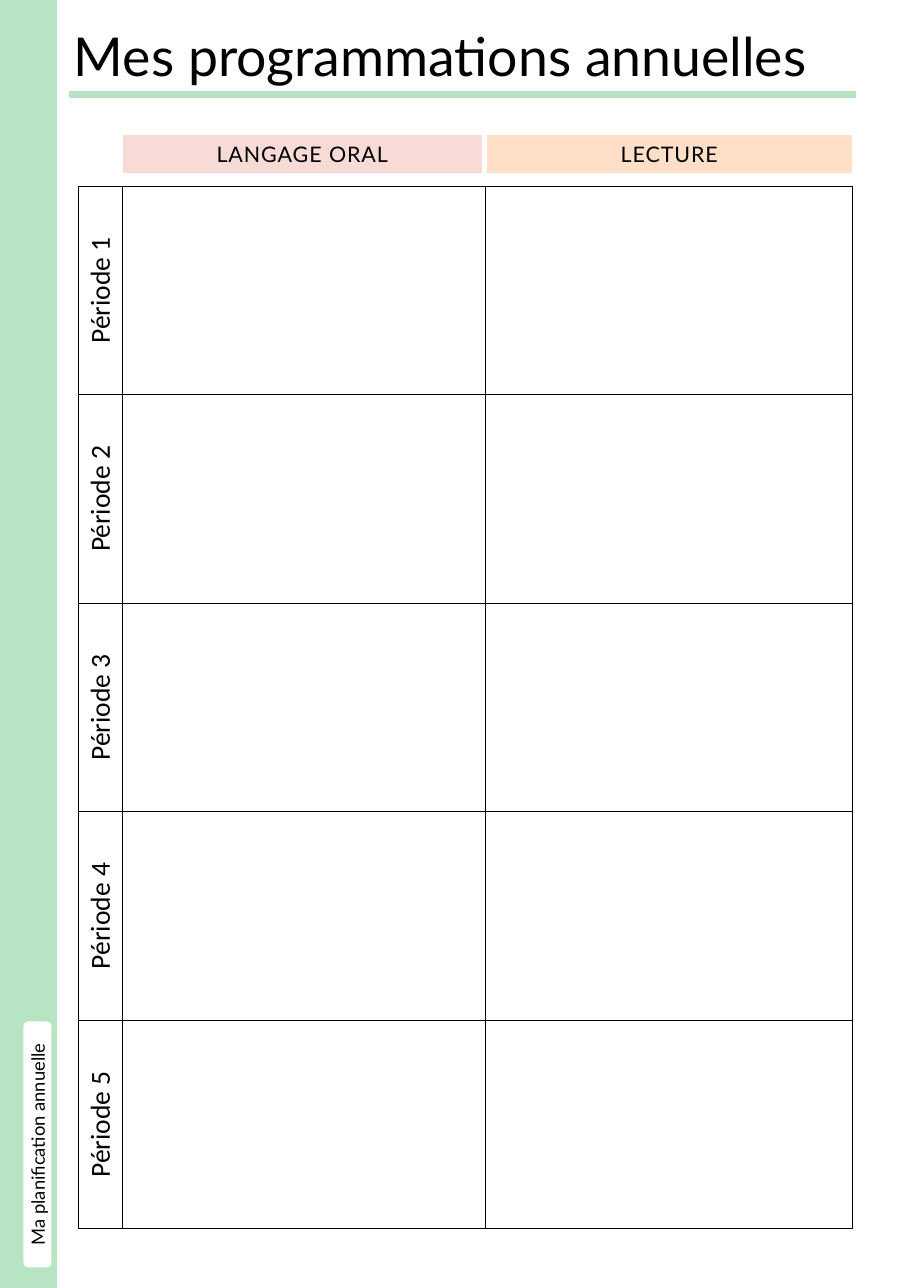
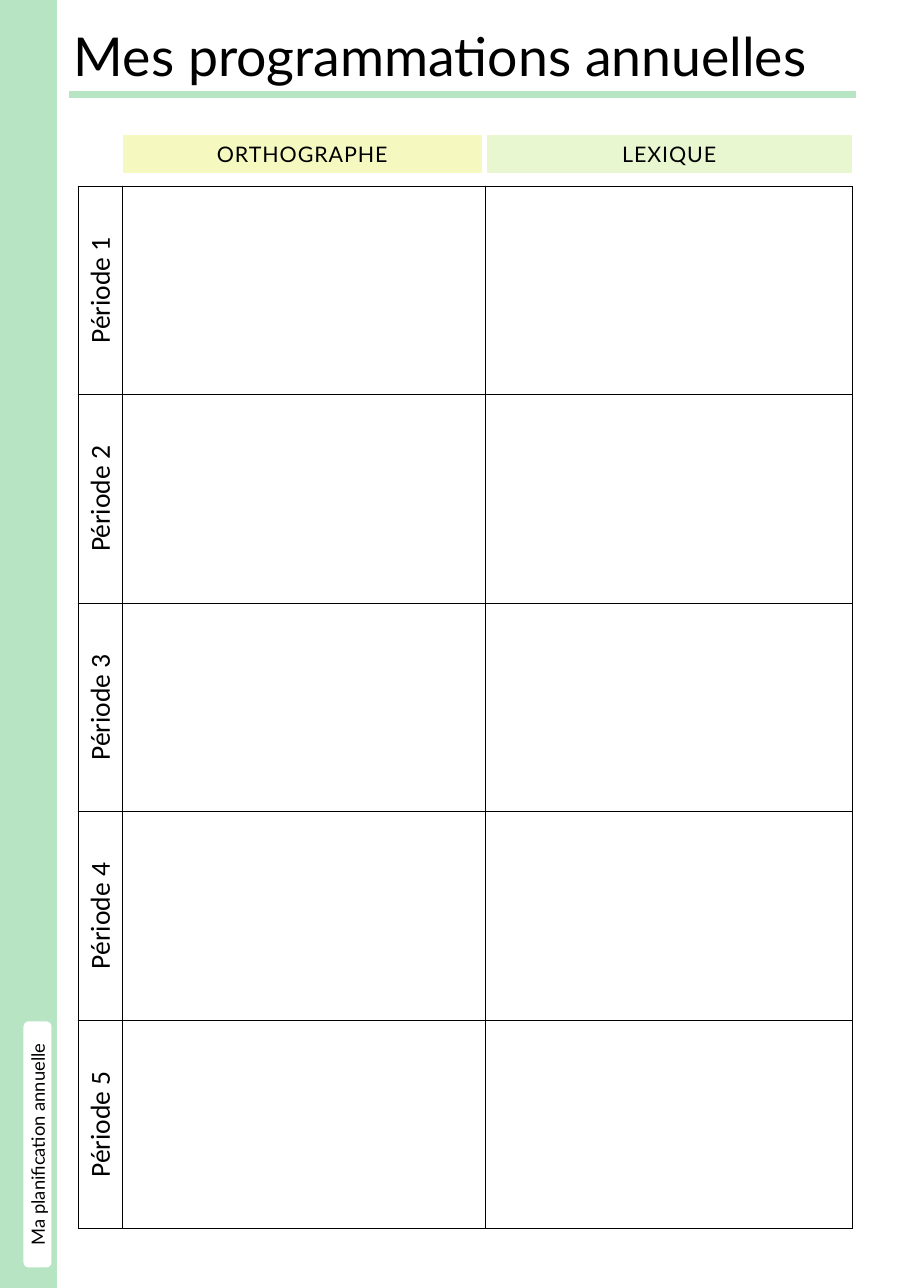
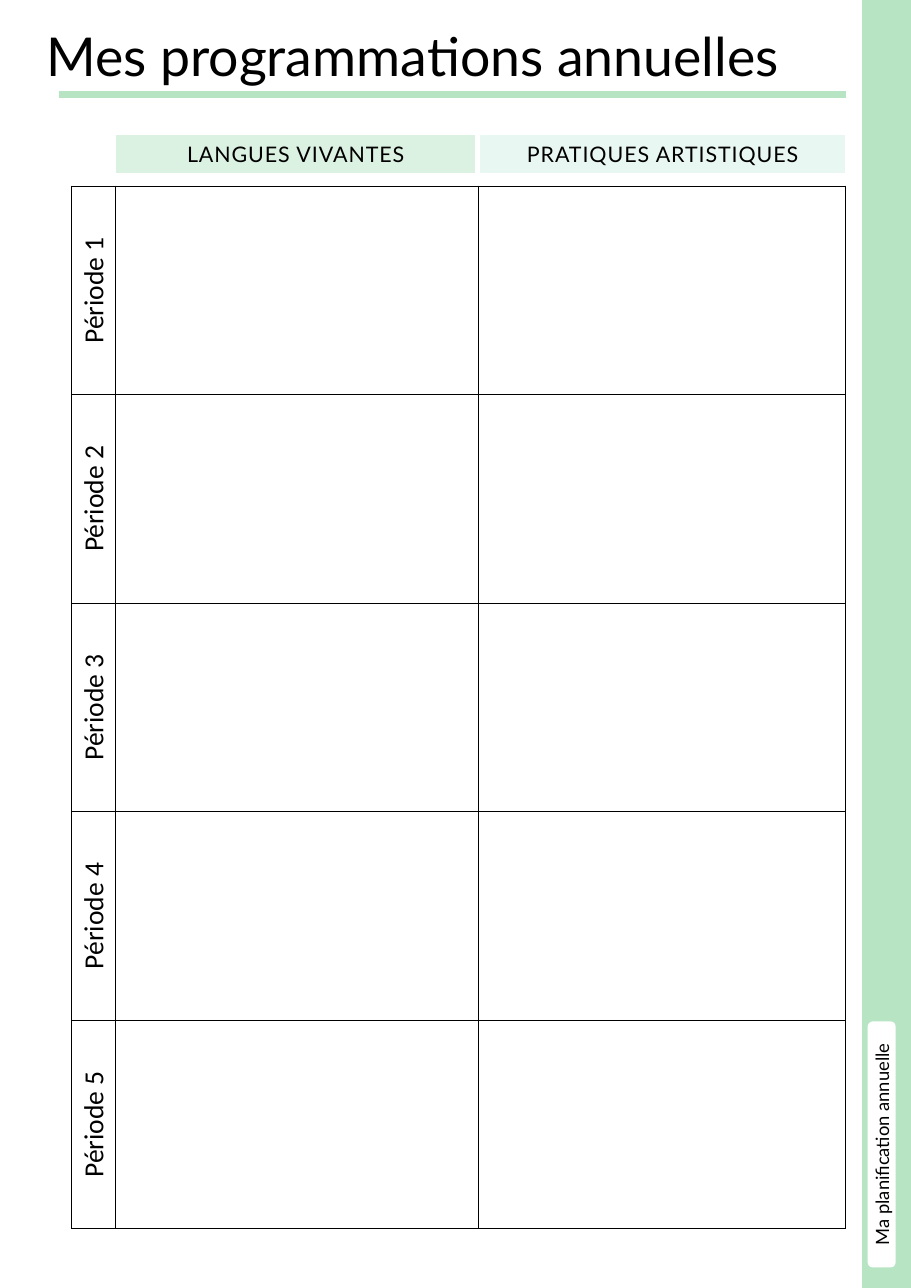
import dataclasses

import lxml.etree
import pptx
import pptx.dml.color
import pptx.enum.shapes
import pptx.enum.text
import pptx.oxml.ns
import pptx.util

Cm = pptx.util.Cm
Pt = pptx.util.Pt
SHAPES = pptx.enum.shapes.MSO_SHAPE
ALIGN = pptx.enum.text.PP_ALIGN
ANCHOR = pptx.enum.text.MSO_ANCHOR
qn = pptx.oxml.ns.qn

PAGE_WIDTH, PAGE_HEIGHT = 21, 29.7
GREEN, WHITE, BLACK = "B7E5C3", "FFFFFF", "000000"
HEADING_FONT, TABLE_FONT = "Lato", "Calibri"
COLUMN_WIDTHS = (1.02, 8.36, 8.46)
ROW_HEIGHT = 4.81
PERIODS = 5
HEADER_HEIGHT = 0.86
HEADER_TO_TABLE = 1.17


@dataclasses.dataclass
class Side:
    """Horizontal positions, in centimetres, for one side of a sheet."""
    band_left: float
    band_width: float
    label_left: float
    title_left: float
    rule_left: float
    grid_left: float


LEFT_BAND = Side(0, 1.3, 0.56, 1.45, 1.6, 1.8)
RIGHT_BAND = Side(19.89, 1.1, 20.02, 0.81, 1.37, 1.65)

PAGES = (
    (LEFT_BAND, (("LANGAGE ORAL", "F8DAD7"), ("LECTURE", "FFDFC8"))),
    (LEFT_BAND, (("ORTHOGRAPHE", "F5F9C0"), ("LEXIQUE", "E9F7D1"))),
    (RIGHT_BAND, (("LANGUES VIVANTES", "DBF1E1"), ("PRATIQUES ARTISTIQUES", "E9F7F3"))),
)


def color(value):
    """Turn a hex string into a colour."""
    return pptx.dml.color.RGBColor.from_string(value)


def write(frame, text, size, font=HEADING_FONT, align=ALIGN.CENTER):
    """Write one formatted paragraph and return it."""
    para = frame.paragraphs[0]
    para.text = text
    para.alignment = align
    para.font.size = Pt(size)
    para.font.name = font
    para.font.color.rgb = color(BLACK)
    return para


def add_box(page, kind, left, top, width, height, fill, line_width):
    """Add a flat shape whose outline matches its fill."""
    box = page.shapes.add_shape(kind, Cm(left), Cm(top), Cm(width), Cm(height))
    box.shadow.inherit = False
    box.fill.solid()
    box.fill.fore_color.rgb = color(fill)
    box.line.color.rgb = color(fill)
    box.line.width = Pt(line_width)
    return box


def add_title(page, left, top):
    """Place the page title."""
    title = page.shapes.title
    title.left, title.top, title.width, title.height = Cm(left), Cm(top), Cm(19.5), Cm(1.75)
    frame = title.text_frame
    frame.auto_size = pptx.enum.text.MSO_AUTO_SIZE.NONE
    frame.vertical_anchor = ANCHOR.TOP
    write(frame, "Mes programmations annuelles", 35, align=ALIGN.LEFT)


def add_side_band(page, side):
    """Draw the coloured edge and its section label."""
    add_box(page, SHAPES.RECTANGLE, side.band_left, 0, side.band_width, PAGE_HEIGHT, GREEN, 1)
    label = add_box(page, SHAPES.ROUNDED_RECTANGLE, side.label_left, 23.57, 0.61, 5.64, WHITE, 1)
    frame = label.text_frame
    frame.vertical_anchor = ANCHOR.MIDDLE
    frame._txBody.bodyPr.set("vert", "vert270")
    write(frame, "Ma planification annuelle", 12)


def add_rule(page, left, top):
    """Underline the title."""
    rule = page.shapes.add_connector(
        pptx.enum.shapes.MSO_CONNECTOR.STRAIGHT, Cm(left), Cm(top), Cm(left + 18.14), Cm(top))
    rule.line.color.rgb = color(GREEN)
    rule.line.width = Pt(4.75)
    lxml.etree.SubElement(rule._element.spPr, qn("a:effectLst"))


def add_header(page, left, top, width, subject, fill):
    """Add the coloured heading of one subject."""
    header = add_box(page, SHAPES.RECTANGLE, left, top, width, HEADER_HEIGHT, fill, 0.75)
    header.text_frame.vertical_anchor = ANCHOR.TOP
    para = write(header.text_frame, subject, 14)
    para.runs[0]._r.get_or_add_rPr().set("spc", "60")


def set_borders(cell):
    """Draw a thin black border on all sides of a cell."""
    properties = cell._tc.get_or_add_tcPr()
    for index, edge in enumerate(("a:lnL", "a:lnR", "a:lnT", "a:lnB")):
        line = lxml.etree.Element(qn(edge), w=str(Pt(0.75)))
        fill = lxml.etree.SubElement(line, qn("a:solidFill"))
        lxml.etree.SubElement(fill, qn("a:srgbClr"), val=BLACK)
        properties.insert(index, line)


def add_period_table(page, left, top):
    """Add the table with one row for each period."""
    table = page.shapes.add_table(
        PERIODS, len(COLUMN_WIDTHS), Cm(left), Cm(top),
        Cm(sum(COLUMN_WIDTHS)), Cm(PERIODS * ROW_HEIGHT)).table
    table.first_row = False
    table.horz_banding = False
    for column, width in zip(table.columns, COLUMN_WIDTHS):
        column.width = Cm(width)
    for number, row in enumerate(table.rows, 1):
        row.height = Cm(ROW_HEIGHT)
        for cell in row.cells:
            cell.fill.background()
            set_borders(cell)
        period = row.cells[0]
        period.vertical_anchor = ANCHOR.MIDDLE
        period._tc.get_or_add_tcPr().set("vert", "vert270")
        write(period.text_frame, f"Période {number}", 18, TABLE_FONT)


def add_planner(page, left, top, subjects):
    """Place the period table under its subject headings."""
    add_period_table(page, left, top + HEADER_TO_TABLE)
    for (subject, fill), offset, width in zip(subjects, (1.04, 9.44), (8.26, 8.38)):
        add_header(page, left + offset, top, width, subject, fill)


def add_page(deck, side, subjects):
    """Build one planning page."""
    page = deck.slides.add_slide(deck.slide_layouts[5])
    add_title(page, side.title_left, 0.41)
    add_side_band(page, side)
    add_rule(page, side.rule_left, 2.18)
    add_planner(page, side.grid_left, 3.12, subjects)


def main():
    """Build and save the deck."""
    deck = pptx.Presentation()
    deck.slide_width, deck.slide_height = Cm(PAGE_WIDTH), Cm(PAGE_HEIGHT)
    for side, subjects in PAGES:
        add_page(deck, side, subjects)
    deck.save("out.pptx")


if __name__ == "__main__":
    main()
